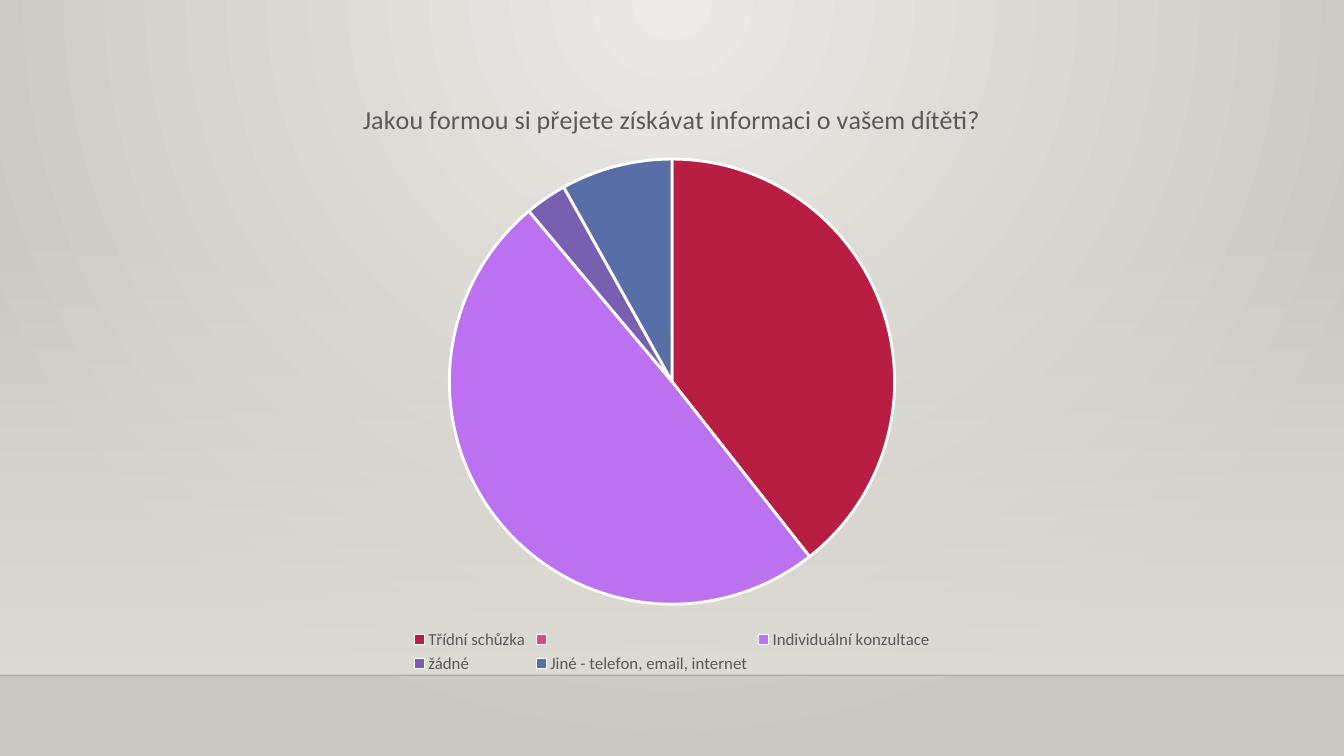
from pptx import Presentation
from pptx.chart.data import CategoryChartData as Data
from pptx.dml.color import RGBColor
from pptx.enum.chart import XL_CHART_TYPE as Kind, XL_LEGEND_POSITION as Place
from pptx.enum.shapes import MSO_CONNECTOR as Link, MSO_SHAPE as Form
from pptx.oxml import parse_xml
from pptx.oxml.ns import nsdecls
from pptx.util import Inches, Pt

WIDE, HIGH = 13.33, 7.5
FLOOR = 6.7
FONT = "Calibri"
GREY = "595959"
TITLE = "Jakou formou si přejete získávat informaci o vašem dítěti?"
SLICES = [
    ("Třídní schůzka", 39, "B71E42"),
    ("", 0, "DE478E"),
    ("Individuální konzultace", 49, "BC72F0"),
    ("žádné", 3, "795FAF"),
    ("Jiné - telefon, email, internet", 8, "586EA6"),
]


def tint(code):
    return RGBColor.from_string(code)


def node(xml):
    """Parse one element of the drawing namespace."""
    tag, rest = xml.split(" ", 1)
    return parse_xml(f"{tag} {nsdecls('a')} {rest}")


def fade(fill, first, last):
    fill.gradient()
    for stop, code, place in zip(fill.gradient_stops, (first, last), (0, 1)):
        stop.color.rgb = tint(code)
        stop.position = place


def clear(owner, share):
    """Set the opacity, in percent, of the first colour found in owner."""
    color = owner.xpath(".//a:srgbClr")[0]
    color.append(node(f'<a:alpha val="{share * 1000}"/>'))


def style(font, size, code):
    font.name = FONT
    font.size = Pt(size)
    font.bold = False
    font.color.rgb = tint(code)


def write(frame, text, **form):
    frame.text = text
    style(frame.paragraphs[0].runs[0].font, **form)


def backdrop(slide):
    fade(slide.background.fill, "ECEAE7", "CAC7C1")
    line = slide.element.xpath(".//p:bg//a:lin")[0]
    glow = node('<a:path path="circle"><a:fillToRect l="43000" t="0" '
                'r="43000" b="100000"/></a:path>')
    line.getparent().replace(line, glow)


def wall(slide, top):
    shape = slide.shapes.add_shape(
        Form.RECTANGLE, 0, Inches(top), Inches(WIDE), Inches(FLOOR - top))
    shape.shadow.inherit = False
    shape.line.fill.background()
    fade(shape.fill, "DFDBD5", "DFDBD5")
    shape.fill.gradient_angle = 270
    clear(shape.element, 0)


def edge(slide):
    line = slide.shapes.add_connector(
        Link.STRAIGHT, 0, Inches(FLOOR), Inches(WIDE), Inches(FLOOR))
    line.line.color.rgb = tint("000001")
    line.line.width = Pt(1)
    clear(line.element, 20)
    line.element.spPr.append(node("<a:effectLst />"))


def pie(slide, left, top, width, height):
    data = Data()
    data.categories = [name for name, _, _ in SLICES]
    data.add_series(TITLE, [value for _, value, _ in SLICES])
    chart = slide.shapes.add_chart(
        Kind.PIE, Inches(left), Inches(top), Inches(width), Inches(height),
        data).chart
    style(chart.font, 10, "000000")
    write(chart.chart_title.text_frame, TITLE, size=18.6, code=GREY)
    chart.chart_title.include_in_layout = False
    chart.has_legend = True
    chart.legend.position = Place.BOTTOM
    chart.legend.include_in_layout = False
    style(chart.legend.font, 12, GREY)
    plot = chart.plots[0]
    plot.vary_by_categories = True
    for spot, (_, _, code) in enumerate(SLICES):
        form = plot.series[0].points[spot].format
        form.fill.solid()
        form.fill.fore_color.rgb = tint(code)
        form.line.color.rgb = tint("FFFFFF")
        form.line.width = Pt(2)


def main():
    deck = Presentation()
    deck.slide_width, deck.slide_height = Inches(WIDE), Inches(HIGH)
    slide = deck.slides.add_slide(deck.slide_layouts[6])
    backdrop(slide)
    wall(slide, 2.21)
    edge(slide)
    pie(slide, 2.22, 0.79, 8.89, 5.93)
    deck.save("out.pptx")


if __name__ == "__main__":
    main()
